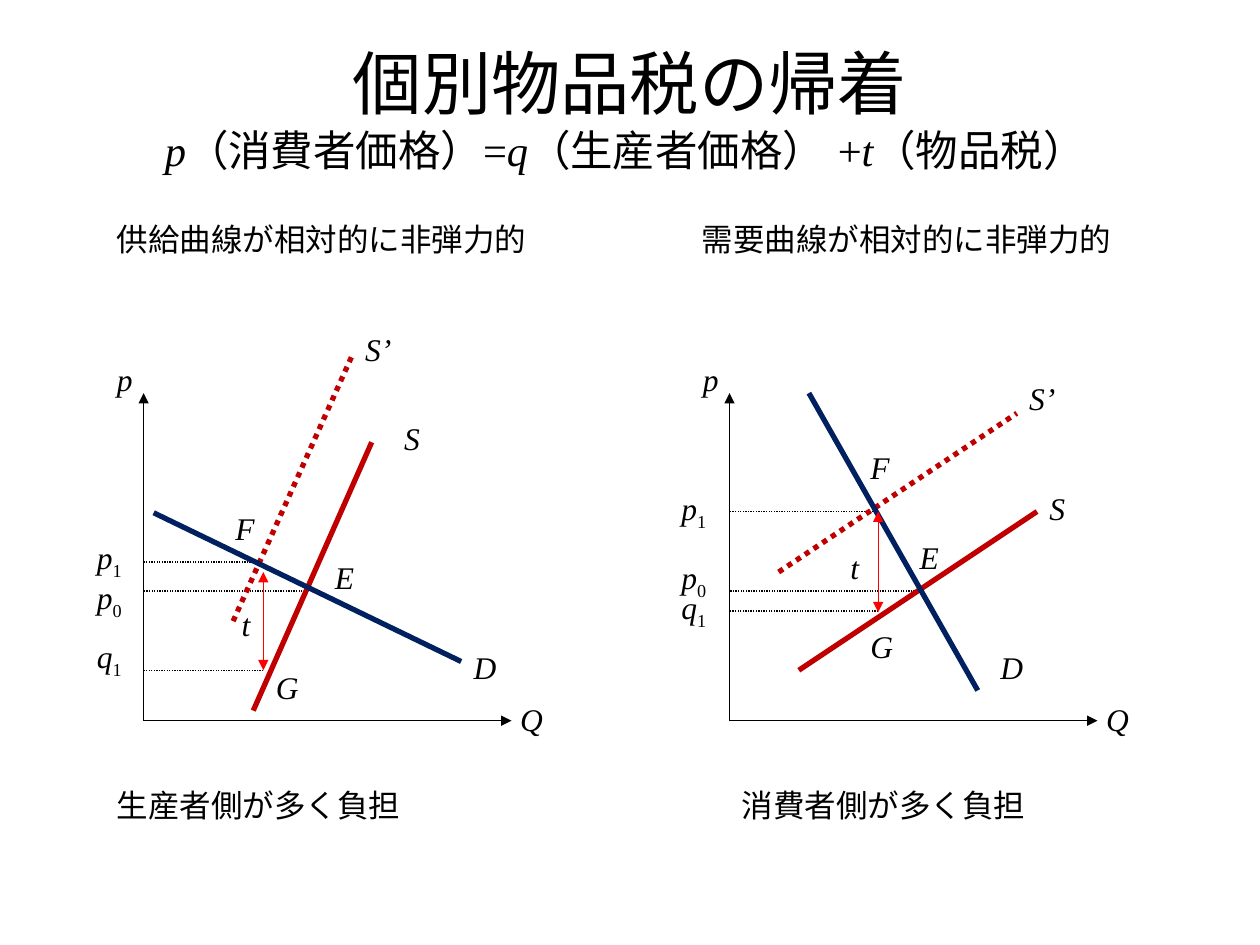
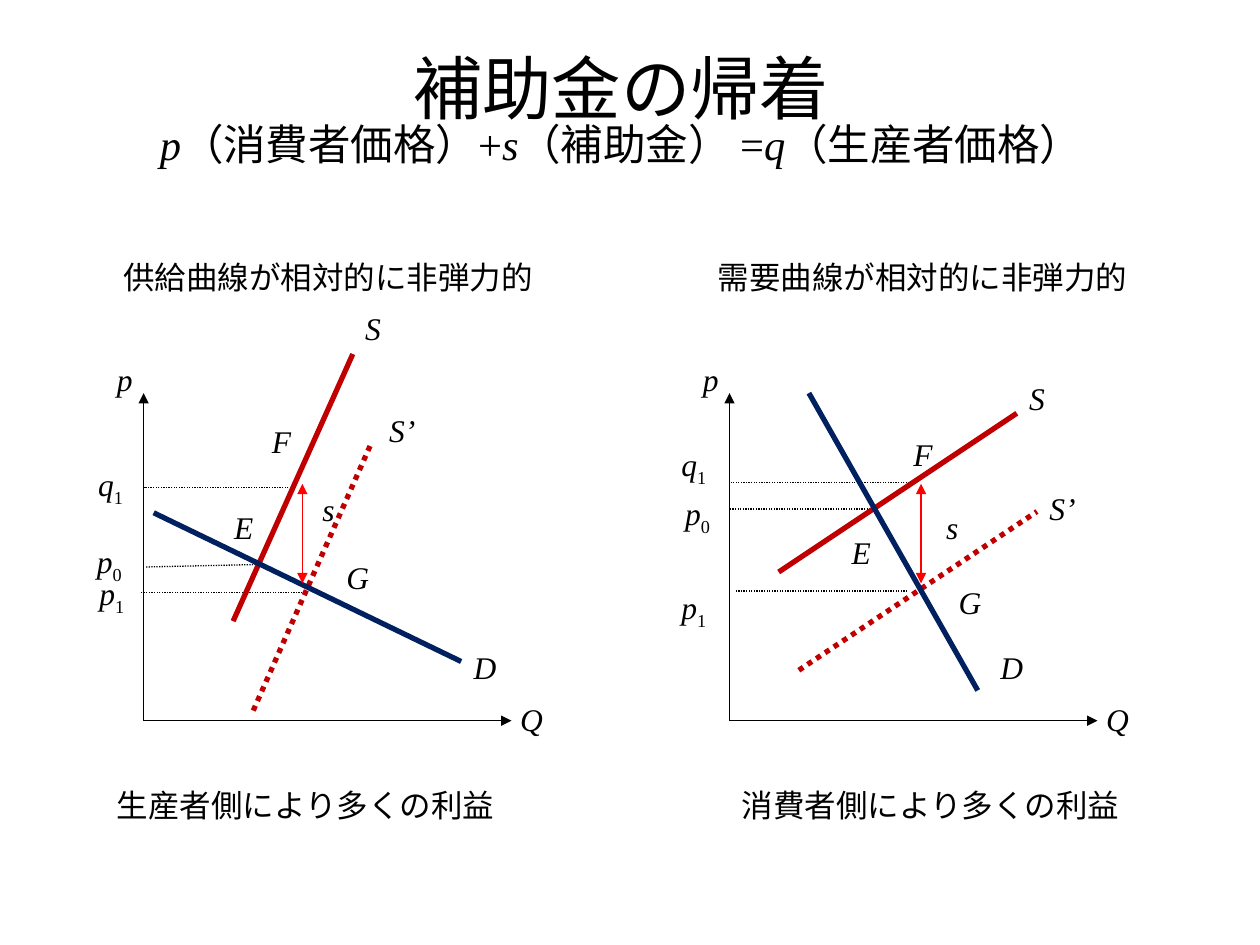
"""Build two slides on who bears an excise tax and who gains from a subsidy."""
from lxml.etree import SubElement
from pptx import Presentation
from pptx.dml.color import RGBColor
from pptx.enum.dml import MSO_LINE_DASH_STYLE as Dash
from pptx.enum.shapes import MSO_CONNECTOR as Connector
from pptx.enum.text import MSO_ANCHOR as Anchor, PP_ALIGN as Align
from pptx.oxml.ns import qn
from pptx.util import Inches, Pt

COLORS = {"ink": "000000", "supply": "C00000", "demand": "002060", "wedge": "FF0000"}
BODY, SYMBOL = "Calibri", "Times New Roman"
TITLE_SIZE, FORMULA_SIZE, TEXT_SIZE = 39.6, 24.3, 18
CELL = Inches(0.1)
BASE_ROW = 57.2
TEXT_ROWS = 4
AXIS_COLUMNS = {"left": 11.4, "right": 57.9}

CURVES = {
    "left": {
        "lower": ((8.7, 0.8), (18.1, 22.1)),
        "upper": ((7.1, 7.9), (16.6, 29.1)),
        "demand": ((0.8, 16.5), (25.2, 4.7)),
        "D": (25.2, 6.3),
    },
    "right": {
        "lower": ((5.5, 4), (24.4, 16.6)),
        "upper": ((3.9, 11.8), (22.8, 24.4)),
        "demand": ((6.3, 26), (19.7, 2.4)),
        "D": (20.5, 6.3),
    },
}

SLIDES = [
    {
        "title": "個別物品税の帰着",
        "title_at": (5, 3),
        "formula": [("p", True), ("（消費者価格）=", False), ("q", True),
                    ("（生産者価格）", False), (" ", False, 32.4), ("+", False),
                    ("t", True), ("（物品税） ", False)],
        "shifted": "upper",
        "captions": [("供給曲線が相対的に非弾力的", 8.3, 17, 34.7),
                     ("需要曲線が相対的に非弾力的", 54.7, 17, 34.7),
                     ("生産者側が多く負担", 8.3, 61.9, 36.2),
                     ("消費者側が多く負担", 57.9, 61.9, 32.3)],
        "left": {
            "labels": {"S": (19.7, 24.4), "S’": (16.6, 31.5), "E": (14.2, 13.4),
                       "F": (6.3, 17.3), "G": (9.5, 4.7), "t": (6.8, 9.7)},
            "prices": [("p", "1", (-4.7, 15), (8.7, 12.6), (0, 12.6)),
                       ("p", "0", (-4.7, 11.8), (12.6, 10.3), (0, 10.3)),
                       ("q", "1", (-4.7, 7.1), (9.5, 4), (0, 4))],
            "wedge": ((9.5, 11.8), (9.5, 4)),
        },
        "right": {
            "labels": {"S": (24.4, 18.9), "S’": (22.8, 27.6), "E": (14.1, 15),
                       "F": (10.2, 22.1), "G": (10.2, 7.9), "t": (8.6, 14.2)},
            "prices": [("p", "1", (-4.8, 18.9), (11.8, 16.6), (0, 16.6)),
                       ("p", "0", (-4.8, 13.4), (14.9, 10.3), (0, 10.3)),
                       ("q", "1", (-4.8, 11), (11.8, 8.7), (0, 8.7))],
            "wedge": ((11.8, 16.6), (11.8, 8.6)),
        },
    },
    {
        "title": "補助金の帰着",
        "title_at": (4.3, 2.9),
        "formula": [("p", True), ("（消費者価格）+", False), ("s", True),
                    ("（補助金） =", False), ("q", True), ("（生産者価格）", False)],
        "shifted": "lower",
        "captions": [("供給曲線が相対的に非弾力的", 8.8, 20, 34.7),
                     ("需要曲線が相対的に非弾力的", 56, 20, 34.7),
                     ("生産者側により多くの利益", 8.3, 61.9, 36.2),
                     ("消費者側により多くの利益", 57.9, 61.9, 32.3)],
        "left": {
            "labels": {"S": (16.6, 33.2), "S’": (18.5, 25.1), "E": (6.2, 17.4),
                       "F": (9.2, 24.2), "G": (15.1, 13.4), "s": (13.2, 18.8)},
            "prices": [("q", "1", (-4.6, 20.8), (11.9, 18.5), (0, 18.5)),
                       ("p", "0", (-4.7, 14.7), (9.1, 12.4), (0.1, 12.2)),
                       ("p", "1", (-4.5, 12.1), (13, 10.2), (-0.3, 10.2))],
            "wedge": ((12.6, 18.8), (12.6, 10.9)),
        },
        "right": {
            "labels": {"S": (22.8, 27.6), "S’": (24.4, 18.9), "E": (8.7, 15.4),
                       "F": (13.6, 23.2), "G": (17.2, 11.4), "s": (16.2, 17.4)},
            "prices": [("q", "1", (-4.8, 22.4), (14.5, 18.9), (0.1, 18.9)),
                       ("p", "0", (-4.5, 18.5), (11.8, 16.8), (0, 16.8)),
                       ("p", "1", (-4.8, 11), (14.1, 10.3), (0.4, 10.3))],
            "wedge": ((15.2, 18.8), (15.2, 10.9)),
        },
    },
]


def cells(count):
    """Turn a count of grid cells into a length."""
    return round(count * CELL)


def add_box(page, column, row, columns, rows=TEXT_ROWS):
    """Add a wrapping text box on the grid and return its text frame."""
    frame = page.shapes.add_textbox(*map(cells, (column, row, columns, rows))).text_frame
    frame.word_wrap = True
    return frame


def add_span(para, text, size=TEXT_SIZE, font=SYMBOL, italic=False, subscript=False):
    """Add one run of text to a paragraph."""
    span = para.add_run()
    span.text = text
    span.font.size = Pt(size)
    span.font.name = font
    span.font.italic = italic
    span.font.color.rgb = RGBColor.from_string(COLORS["ink"])
    if subscript:
        span.font._element.set("baseline", "-25000")


def add_title(page, title, formula, corner):
    """Add the title with the price formula on its second line."""
    frame = add_box(page, *corner, 90, 12.5)
    frame.vertical_anchor = Anchor.MIDDLE
    para = frame.paragraphs[0]
    para.alignment = Align.CENTER
    para.line_spacing = 0.8
    add_span(para, title, TITLE_SIZE, BODY)
    para.add_line_break()
    for text, italic, *size in formula:
        add_span(para, text, size[0] if size else FORMULA_SIZE, italic=italic)


def add_caption(page, text, column, row, columns):
    """Add a line of plain text above or below a diagram."""
    add_span(add_box(page, column, row, columns).paragraphs[0], text, font=BODY)


class Diagram:
    """Draw on a page in cells right of and above the crossing of the axes."""

    def __init__(self, page, side):
        """Remember the page and the column of the price axis."""
        self.page = page
        self.column = AXIS_COLUMNS[side]

    def place(self, point):
        """Turn a point of the diagram into a grid column and row."""
        quantity, price = point
        return self.column + quantity, BASE_ROW - price

    def line(self, start, end, color="ink", width=0.75, dotted=False, arrows=()):
        """Draw a straight line with optional dots and arrowheads."""
        ends = [cells(count) for point in (start, end) for count in self.place(point)]
        connector = self.page.shapes.add_connector(Connector.STRAIGHT, *ends)
        connector.line.color.rgb = RGBColor.from_string(COLORS[color])
        connector.line.width = Pt(width)
        if dotted:
            connector.line.dash_style = Dash.ROUND_DOT
        outline = connector.line._get_or_add_ln()
        for arrow in arrows:
            SubElement(outline, qn(f"a:{arrow}End"), type="triangle")
        SubElement(connector._element.spPr, qn("a:effectLst"))

    def label(self, text, corner, subscript=""):
        """Write an italic symbol with an optional subscript."""
        columns = 4.7 if subscript or len(text) > 1 else 3.9
        para = add_box(self.page, *self.place(corner), columns).paragraphs[0]
        add_span(para, text, italic=True)
        if subscript:
            add_span(para, subscript, subscript=True)

    def axes(self):
        """Draw the quantity and price axes with their names."""
        for name, tip, corner in (("Q", (29.2, 0), (28.9, 2.1)), ("p", (0, 26), (-3.1, 29.1))):
            self.line((0, 0), tip, arrows=["tail"])
            self.label(name, corner)


def add_diagram(page, side, market, shifted):
    """Draw one market before and after its supply curve shifts."""
    diagram = Diagram(page, side)
    curves = CURVES[side]
    diagram.axes()
    for symbol, subscript, corner, start, end in market["prices"]:
        diagram.line(start, end, dotted=True)
        diagram.label(symbol, corner, subscript)
    for supply in ("lower", "upper"):
        diagram.line(*curves[supply], "supply", 3, dotted=supply == shifted)
    diagram.line(*curves["demand"], "demand", 3)
    diagram.line(*market["wedge"], "wedge", arrows=["head", "tail"])
    diagram.label("D", curves["D"])
    for text, corner in market["labels"].items():
        diagram.label(text, corner)


def main():
    """Build the deck and save it."""
    deck = Presentation()
    deck.slide_width, deck.slide_height = Inches(10), Inches(7.5)
    for content in SLIDES:
        page = deck.slides.add_slide(deck.slide_layouts[6])
        add_title(page, content["title"], content["formula"], content["title_at"])
        for side in AXIS_COLUMNS:
            add_diagram(page, side, content[side], content["shifted"])
        for caption in content["captions"]:
            add_caption(page, *caption)
    deck.save("out.pptx")


if __name__ == "__main__":
    main()
